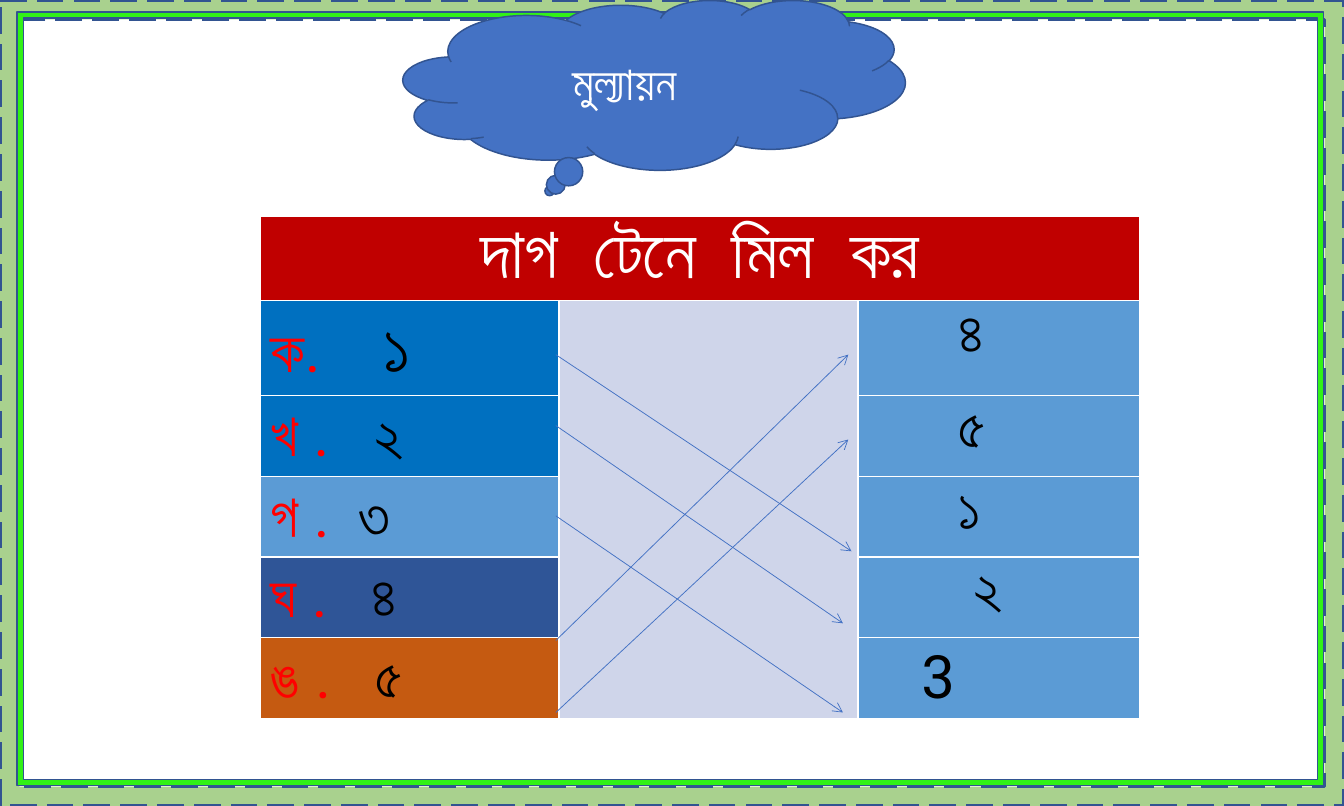
from collections import namedtuple
from dataclasses import dataclass

from lxml.etree import SubElement
from pptx import Presentation
from pptx.dml.color import RGBColor
from pptx.enum.dml import MSO_LINE
from pptx.enum.shapes import MSO_CONNECTOR, MSO_SHAPE
from pptx.enum.text import MSO_ANCHOR, PP_ALIGN
from pptx.oxml.ns import qn
from pptx.util import Pt

PX = 9144
Box = namedtuple("Box", "left top width height")
MatchRow = namedtuple("MatchRow", "label digit tab fill digit_size answer indent")


@dataclass(frozen=True)
class Theme:
    font: str = "Roboto"
    white: str = "FFFFFF"
    black: str = "000000"
    outline: str = "325491"
    outer_frame: str = "A9D18E"
    inner_frame: str = "31F117"
    cloud: str = "4472C4"
    arrow: str = "4472C4"
    header: str = "C00000"
    label: str = "FF0000"
    gap: str = "CFD5EA"
    blue: str = "0070C0"
    sky: str = "5B9BD5"
    navy: str = "2F5597"
    orange: str = "C55A11"
    title_size: int = 32
    body_size: int = 40
    header_size: int = 48


THEME = Theme()
COLUMNS = (278, 278, 262)
HEADER_HEIGHT = 79
ROW_HEIGHTS = (88, 75, 75, 75, 75)
ROWS = (
    MatchRow("ক.", "১", 104, THEME.blue, THEME.header_size, "৪", 93),
    MatchRow("খ .", "২", 96, THEME.blue, THEME.body_size, "৫", 93),
    MatchRow("গ .", "৩", 81, THEME.sky, THEME.body_size, "১", 93),
    MatchRow("ঘ .", "৪", 93, THEME.navy, THEME.body_size, "২", 107),
    MatchRow("ঙ .", "৫", 96, THEME.orange, THEME.body_size, "3", 59),
)
ARROWS = (
    (0, 0, 275, 183),
    (0, 66, 267, 250),
    (0, 150, 267, 333),
    (0, 266, 272, 0),
    (0, 333, 272, 79),
)


def emu(*lengths):
    return [length * PX for length in lengths]


def rgb(code):
    return RGBColor.from_string(code)


def style_span(span, size, color):
    span.font.name = THEME.font
    span.font.size = Pt(size)
    span.font.bold = False
    span.font.color.rgb = rgb(color)


def add_span(para, text, size, color):
    span = para.add_run()
    span.text = text
    style_span(span, size, color)
    return span


def paint_cell(cell, color):
    cell.fill.solid()
    cell.fill.fore_color.rgb = rgb(color)


def add_filled_shape(page, kind, box, fill, line_width):
    shape = page.shapes.add_shape(kind, *emu(*box))
    shape.shadow.inherit = False
    shape.fill.solid()
    shape.fill.fore_color.rgb = rgb(fill)
    shape.line.color.rgb = rgb(THEME.outline)
    shape.line.width = Pt(line_width)
    return shape


def add_border(page, box):
    outer = add_filled_shape(page, MSO_SHAPE.FRAME, box, THEME.outer_frame, 2.25)
    outer.adjustments[0] = 0.024
    outer.line.dash_style = MSO_LINE.LONG_DASH
    inset = Box(box.left + 16, box.top + 11, box.width - 35, box.height - 30)
    inner = add_filled_shape(page, MSO_SHAPE.FRAME, inset, THEME.inner_frame, 1)
    inner.adjustments[0] = 0.008


def add_title_cloud(page, box):
    cloud = add_filled_shape(page, MSO_SHAPE.CLOUD_CALLOUT, box, THEME.cloud, 1)
    frame = cloud.text_frame
    frame.word_wrap = True
    frame.vertical_anchor = MSO_ANCHOR.MIDDLE
    frame.margin_right = 32 * PX
    frame.text = "মুল্যায়ন"
    para = frame.paragraphs[0]
    para.alignment = PP_ALIGN.CENTER
    style_span(para.runs[0], THEME.title_size, THEME.white)


def fill_header(cell):
    paint_cell(cell, THEME.header)
    para = cell.text_frame.paragraphs[0]
    para.alignment = PP_ALIGN.CENTER
    for index, word in enumerate(("দাগ", "টেনে", "মিল", "কর")):
        if index:
            space = add_span(para, " ", THEME.header_size, THEME.white)
            space.font._element.set("spc", "1200")
        add_span(para, word, THEME.header_size, THEME.white)


def fill_question(cell, row):
    paint_cell(cell, row.fill)
    para = cell.text_frame.paragraphs[0]
    tabs = SubElement(para._p.get_or_add_pPr(), qn("a:tabLst"))
    SubElement(tabs, qn("a:tab"), pos=str(row.tab * PX), algn="l")
    add_span(para, row.label, THEME.body_size, THEME.label)
    add_span(para, "\t" + row.digit, row.digit_size, THEME.black)


def fill_answer(cell, row):
    paint_cell(cell, THEME.sky)
    cell.margin_left = row.indent * PX
    add_span(cell.text_frame.paragraphs[0], row.answer, THEME.body_size, THEME.black)


def add_match_table(page, box):
    table = page.shapes.add_table(len(ROWS) + 1, len(COLUMNS), *emu(*box)).table
    table.horz_banding = False
    for column, width in zip(table.columns, COLUMNS):
        column.width = width * PX
    for line, height in zip(table.rows, (HEADER_HEIGHT, *ROW_HEIGHTS)):
        line.height = height * PX
    table.cell(0, 0).merge(table.cell(0, len(COLUMNS) - 1))
    table.cell(1, 1).merge(table.cell(len(ROWS), 1))
    fill_header(table.cell(0, 0))
    paint_cell(table.cell(1, 1), THEME.gap)
    for index, row in enumerate(ROWS, 1):
        fill_question(table.cell(index, 0), row)
        fill_answer(table.cell(index, 2), row)


def add_match_arrows(page, box):
    group = page.shapes.add_group_shape()
    for start_x, start_y, end_x, end_y in ARROWS:
        arrow = group.shapes.add_connector(
            MSO_CONNECTOR.STRAIGHT,
            *emu(box.left + start_x, box.top + start_y, box.left + end_x, box.top + end_y),
        )
        arrow.line.color.rgb = rgb(THEME.arrow)
        arrow.line.width = Pt(0.5)
        SubElement(arrow.line._get_or_add_ln(), qn("a:tailEnd"), type="arrow")
        SubElement(arrow._element.spPr, qn("a:effectLst"))


def build_matching_slide(deck, box):
    page = deck.slides.add_slide(deck.slide_layouts[6])
    add_border(page, box)
    add_title_cloud(page, Box(box.left + 375, box.top, 467, 158))
    table_height = HEADER_HEIGHT + sum(ROW_HEIGHTS)
    add_match_table(page, Box(box.left + 242, box.top + 201, sum(COLUMNS), table_height))
    add_match_arrows(page, Box(box.left + 517, box.top + 330, 275, 333))


def main():
    deck = Presentation()
    deck.slide_width, deck.slide_height = emu(1250, 750)
    build_matching_slide(deck, Box(0, 0, 1250, 750))
    deck.save("out.pptx")


if __name__ == "__main__":
    main()
